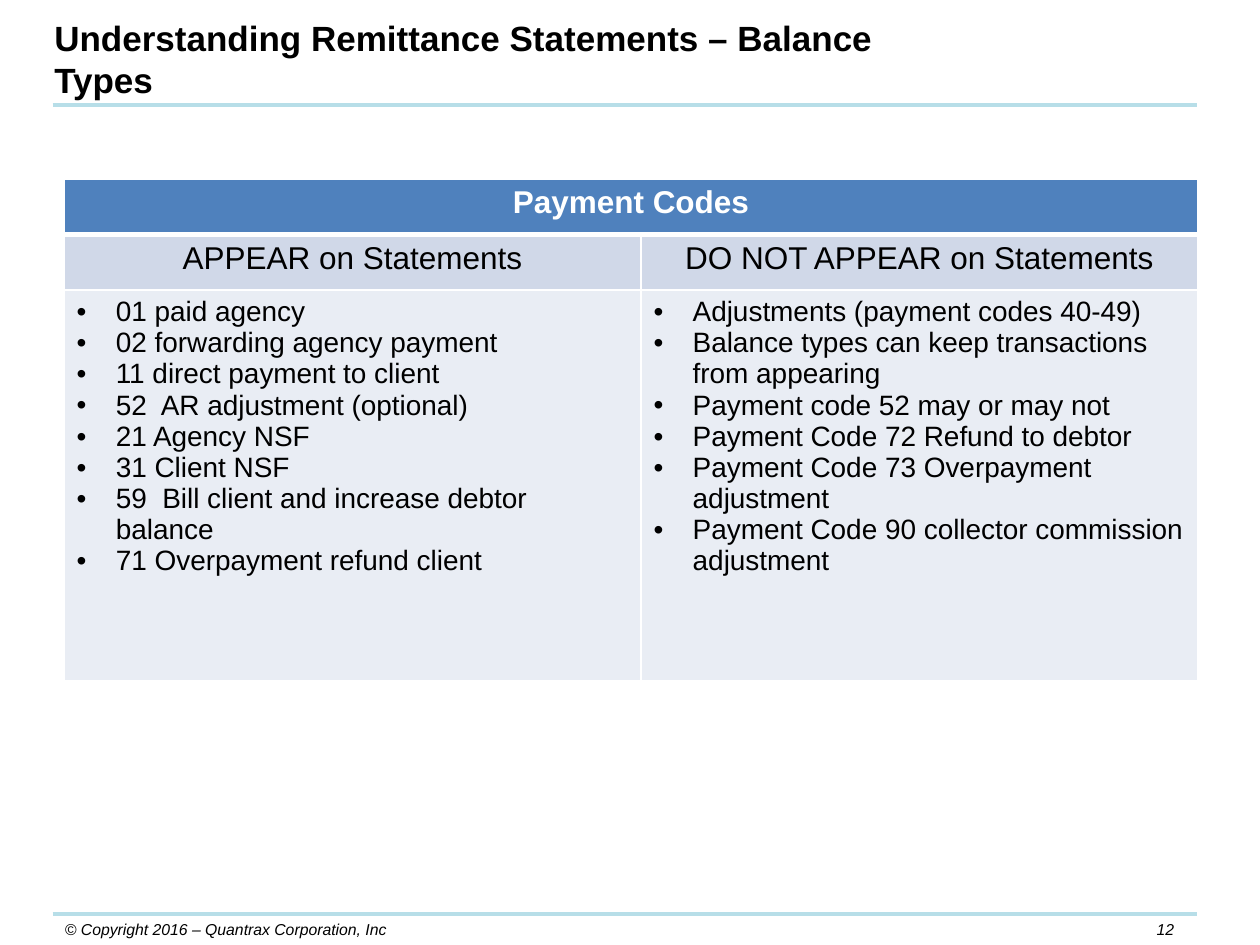
from lxml.etree import SubElement
from pptx import Presentation
from pptx.dml.color import RGBColor
from pptx.enum.shapes import MSO_CONNECTOR
from pptx.enum.text import MSO_ANCHOR, PP_ALIGN
from pptx.oxml.ns import qn
from pptx.util import Cm, Pt

BLACK, WHITE, BLUE, RULE = "000000", "FFFFFF", "4F81BD", "B7DEE8"
SUBHEAD, BODY = "D0D8E8", "E9EDF4"
APPEAR = [
    "01 paid agency",
    "02 forwarding agency payment",
    "11 direct payment to client",
    "52  AR adjustment (optional)",
    "21 Agency NSF",
    "31 Client NSF",
    "59  Bill client and increase debtor balance",
    "71 Overpayment refund client",
]
DO_NOT_APPEAR = [
    "Adjustments (payment codes 40-49)",
    "Balance types can keep transactions from appearing",
    "Payment code 52 may or may not",
    "Payment Code 72 Refund to debtor",
    "Payment Code 73 Overpayment adjustment",
    "Payment Code 90 collector commission adjustment",
]


def color(value):
    return RGBColor.from_string(value)


class StatementSlide:
    font = "Arial"

    def __init__(self, deck):
        self.slide = deck.slides.add_slide(deck.slide_layouts[5])

    def add_text(self, paragraph, text, size, ink=BLACK, bold=False, italic=False,
                 align=PP_ALIGN.LEFT):
        paragraph.alignment = align
        run = paragraph.add_run()
        run.text = text
        run.font.name = self.font
        run.font.size = Pt(size)
        run.font.bold = bold
        run.font.italic = italic
        run.font.color.rgb = color(ink)

    def title(self, text, left, top, width, height):
        heading = self.slide.shapes.title
        heading.left, heading.top = Cm(left), Cm(top)
        heading.width, heading.height = Cm(width), Cm(height)
        heading.text_frame.word_wrap = True
        heading.text_frame.vertical_anchor = MSO_ANCHOR.TOP
        self.add_text(heading.text_frame.paragraphs[0], text, 20, bold=True)

    def rule(self, left, right, y):
        line = self.slide.shapes.add_connector(
            MSO_CONNECTOR.STRAIGHT, Cm(left), Cm(y), Cm(right), Cm(y))
        line.line.color.rgb = color(RULE)
        line.line.width = Pt(2.25)
        SubElement(line._element.spPr, qn("a:effectLst"))

    def footer(self, text, left, top, width, height, align=PP_ALIGN.LEFT):
        note = self.slide.shapes.add_textbox(Cm(left), Cm(top), Cm(width), Cm(height))
        note.text_frame.word_wrap = True
        self.add_text(note.text_frame.paragraphs[0], text, 9, italic=True, align=align)

    def table(self, left, top, widths, heights):
        grid = self.slide.shapes.add_table(
            len(heights), len(widths), Cm(left), Cm(top),
            Cm(sum(widths)), Cm(sum(heights))).table
        for column, width in zip(grid.columns, widths):
            column.width = Cm(width)
        for row, height in zip(grid.rows, heights):
            row.height = Cm(height)
        return grid

    def fill(self, cell, shade, bottom=1):
        properties = cell._tc.get_or_add_tcPr()
        for side, width in (("L", 1), ("R", 1), ("T", 1), ("B", bottom)):
            border = SubElement(properties, qn(f"a:ln{side}"), w=str(Pt(width)))
            solid = SubElement(border, qn("a:solidFill"))
            SubElement(solid, qn("a:srgbClr"), val=WHITE)
        cell.fill.solid()
        cell.fill.fore_color.rgb = color(shade)

    def heading_cell(self, cell, text, ink=BLACK, bold=False):
        self.add_text(cell.text_frame.paragraphs[0], text, 18, ink, bold,
                      align=PP_ALIGN.CENTER)

    def bullet_cell(self, cell, items):
        frame = cell.text_frame
        for index, item in enumerate(items):
            paragraph = frame.add_paragraph() if index else frame.paragraphs[0]
            properties = paragraph._p.get_or_add_pPr()
            properties.set("marL", str(Cm(0.79)))
            properties.set("indent", str(-Cm(0.79)))
            SubElement(properties, qn("a:buFont"), typeface=self.font)
            SubElement(properties, qn("a:buChar"), char="•")
            self.add_text(paragraph, item, 16)


def main():
    deck = Presentation()
    deck.slide_width, deck.slide_height = Cm(25.4), Cm(19.05)
    page = StatementSlide(deck)
    page.title("Understanding Remittance Statements – Balance Types", 0.84, 0.2, 18.62, 1.96)
    for y in (2.11, 18.42):
        page.rule(1.06, 24.13, y)
    page.footer("© Copyright 2016 – Quantrax Corporation, Inc", 1.06, 18.42, 8.26, 0.64)
    page.footer("12", 22.86, 18.42, 1.27, 0.64, PP_ALIGN.CENTER)

    codes = page.table(1.29, 3.61, (11.63, 11.23), (1.12, 1.12, 7.87))
    for row, shade, bottom in ((0, BLUE, 3), (1, SUBHEAD, 1), (2, BODY, 1)):
        for column in range(2):
            page.fill(codes.cell(row, column), shade, bottom)
    codes.cell(0, 0).merge(codes.cell(0, 1))
    page.heading_cell(codes.cell(0, 0), "Payment Codes", WHITE, True)
    columns = (("APPEAR on Statements", APPEAR), ("DO NOT APPEAR on Statements", DO_NOT_APPEAR))
    for column, (heading, items) in enumerate(columns):
        page.heading_cell(codes.cell(1, column), heading)
        page.bullet_cell(codes.cell(2, column), items)
    deck.save("out.pptx")


if __name__ == "__main__":
    main()
